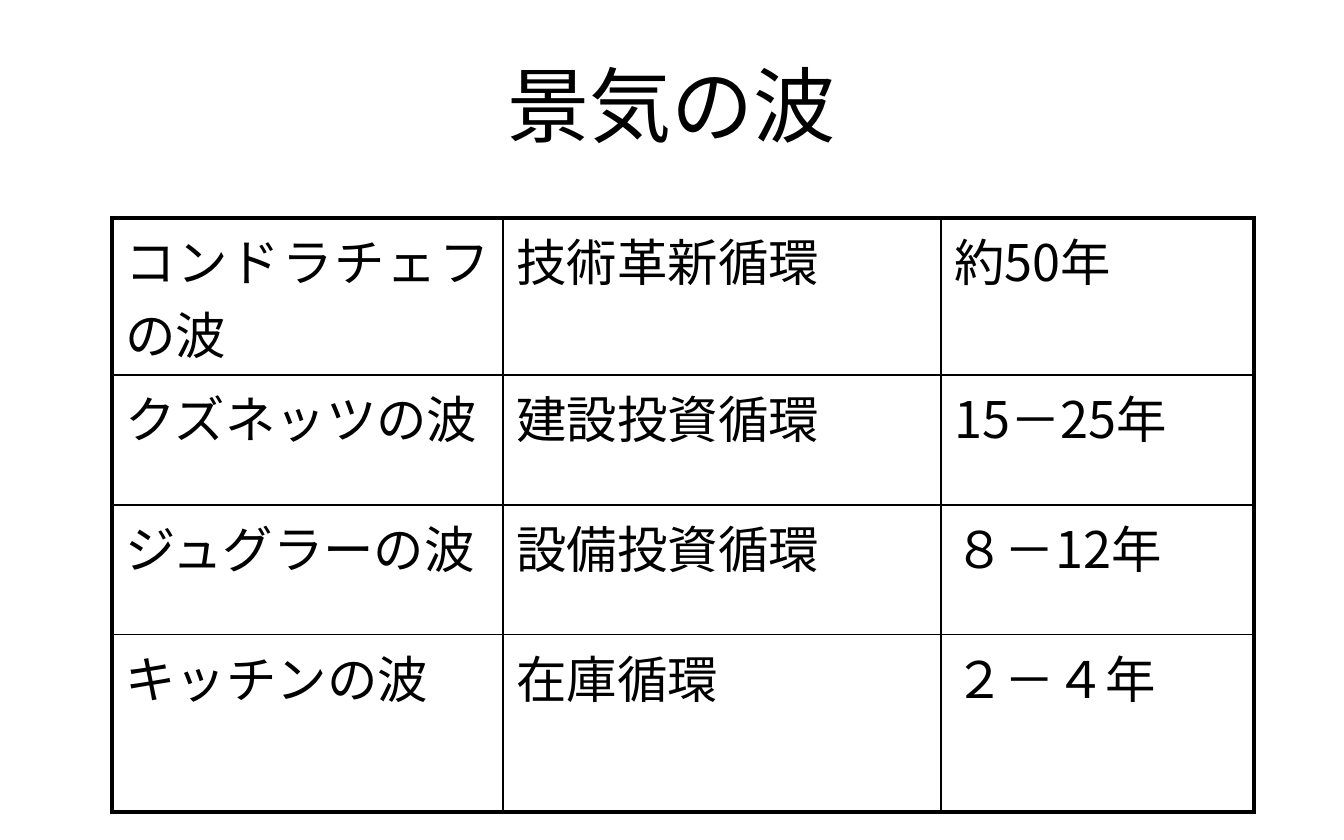
import pptx
import pptx.dml.color
import pptx.enum.lang
import pptx.enum.text
import pptx.oxml.ns
import pptx.util
import lxml.etree

TITLE = "景気の波"
WAVES = [
    ("コンドラチェフの波", "技術革新循環", "約50年"),
    ("クズネッツの波", "建設投資循環", "15－25年"),
    ("ジュグラーの波", "設備投資循環", "８－12年"),
    ("キッチンの波", "在庫循環", "２－４年"),
]
COLUMN_WIDTHS = [391, 438, 313]
ROW_HEIGHTS = [130, 130, 130, 177]
TABLE_LEFT, TABLE_TOP = 112, 218
TITLE_BOX = (67, 34, 1210, 140)
BLACK = "000000"
OUTER_LINE, INNER_LINE = 2.25, 1
ALIGN = pptx.enum.text.PP_ALIGN
ANCHOR = pptx.enum.text.MSO_ANCHOR


def px(length):
    return pptx.util.Emu(round(length * 914400 / 134.4))


def color(code):
    return pptx.dml.color.RGBColor.from_string(code)


def write(frame, text, font, size, align, anchor, before=0):
    frame.word_wrap = True
    frame.vertical_anchor = anchor
    para = frame.paragraphs[0]
    para.alignment = align
    para.space_before = pptx.util.Pt(before)
    span = para.add_run()
    span.text = text
    span.font.name = font
    span.font.size = pptx.util.Pt(size)
    span.font.color.rgb = color(BLACK)
    span.font.language_id = pptx.enum.lang.MSO_LANGUAGE_ID.JAPANESE
    east_asian = lxml.etree.Element(pptx.oxml.ns.qn("a:ea"), typeface="Noto Sans CJK JP")
    span.font._element.find(pptx.oxml.ns.qn("a:latin")).addnext(east_asian)


def add_border(cell, side, width):
    properties = cell._tc.get_or_add_tcPr()
    line = lxml.etree.SubElement(
        properties, pptx.oxml.ns.qn("a:ln" + side), w=str(pptx.util.Pt(width))
    )
    fill = lxml.etree.SubElement(line, pptx.oxml.ns.qn("a:solidFill"))
    lxml.etree.SubElement(fill, pptx.oxml.ns.qn("a:srgbClr"), val=BLACK)


def add_title(page):
    box = page.shapes.title
    box.left, box.top, box.width, box.height = map(px, TITLE_BOX)
    write(box.text_frame, TITLE, font="Calibri", size=44,
          align=ALIGN.CENTER, anchor=ANCHOR.MIDDLE)


def add_wave_table(page):
    table = page.shapes.add_table(
        len(WAVES), len(COLUMN_WIDTHS), px(TABLE_LEFT), px(TABLE_TOP),
        px(sum(COLUMN_WIDTHS)), px(sum(ROW_HEIGHTS)),
    ).table
    table.first_row = False
    table.horz_banding = False
    for column, width in zip(table.columns, COLUMN_WIDTHS):
        column.width = px(width)
    for row, height in zip(table.rows, ROW_HEIGHTS):
        row.height = px(height)

    last_row, last_column = len(WAVES) - 1, len(COLUMN_WIDTHS) - 1
    for r, wave in enumerate(WAVES):
        for c, text in enumerate(wave):
            cell = table.cell(r, c)
            outer_sides = {"L": c == 0, "R": c == last_column,
                           "T": r == 0, "B": r == last_row}
            for side, outer in outer_sides.items():
                add_border(cell, side, OUTER_LINE if outer else INNER_LINE)
            cell.fill.background()
            cell.vertical_anchor = ANCHOR.TOP
            cell.margin_left = cell.margin_right = pptx.util.Inches(0.1)
            cell.margin_top = cell.margin_bottom = pptx.util.Inches(0.04)
            write(cell.text_frame, text, font="Noto Sans CJK JP", size=27,
                  align=ALIGN.JUSTIFY, anchor=None, before=5.4)


def main():
    deck = pptx.Presentation()
    deck.slide_width, deck.slide_height = px(1344), px(840)
    page = deck.slides.add_slide(deck.slide_layouts.get_by_name("Title Only"))
    add_title(page)
    add_wave_table(page)
    deck.save("out.pptx")


if __name__ == "__main__":
    main()
